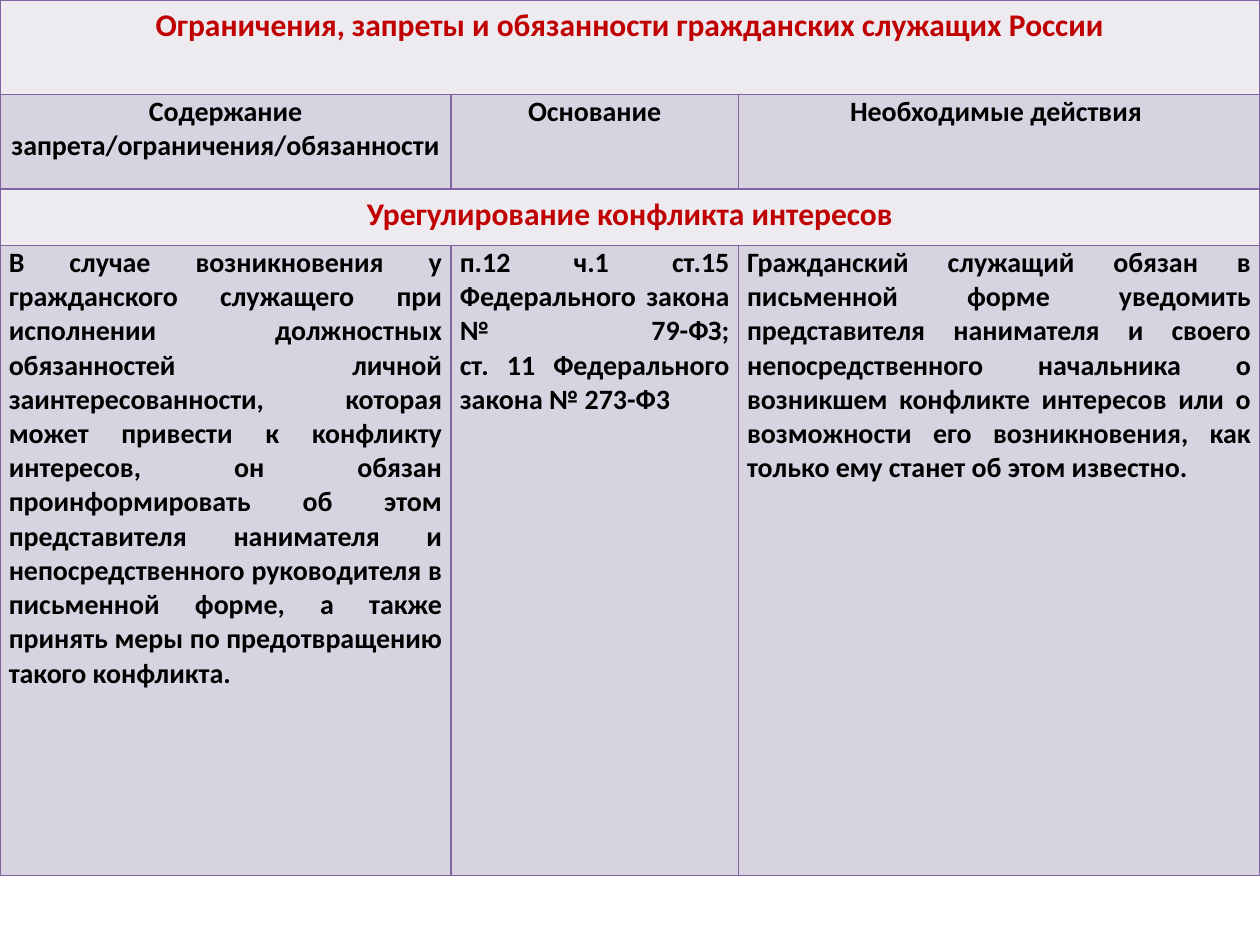
"""Build a slide with a table of civil servants' restrictions and duties."""
from lxml import etree
from pptx import Presentation
from pptx import util as u
from pptx.dml.color import RGBColor
from pptx.enum import text
from pptx.oxml import ns

COLORS = {"title": "C00000", "body": "000000", "band": "EDEAF0", "plain": "D8D3E0", "border": "8064A2"}
COLUMNS = [3.58, 2.28, 4.14]
HEIGHTS = [0.75, 0.75, 0.45, 5]
CENTER, JUSTIFY = text.PP_ALIGN.CENTER, text.PP_ALIGN.JUSTIFY
ROWS = [
    (CENTER, ["Ограничения, запреты и обязанности гражданских служащих России"]),
    (CENTER, ["Содержание запрета/ограничения/обязанности", "Основание", "Необходимые действия "]),
    (CENTER, ["Урегулирование конфликта интересов"]),
    (JUSTIFY, [
        "В случае возникновения у гражданского служащего при исполнении должностных обязанностей "
        "личной заинтересованности, которая может привести к конфликту интересов, он обязан "
        "проинформировать об этом представителя нанимателя и непосредственного руководителя "
        "в письменной форме, а также принять меры по предотвращению такого конфликта.",
        "п.12 ч.1 ст.15 Федерального закона № 79-ФЗ;\nст. 11 Федерального закона № 273-Ф3",
        "Гражданский служащий обязан в письменной форме уведомить представителя нанимателя "
        "и своего непосредственного начальника о возникшем конфликте интересов или "
        "о возможности его возникновения, как только ему станет об этом известно.",
    ]),
]


def add_borders(cell):
    properties = cell._tc.get_or_add_tcPr()
    for side in ("lnL", "lnR", "lnT", "lnB"):
        line = etree.SubElement(properties, ns.qn(f"a:{side}"), w=str(u.Pt(1)))
        fill = etree.SubElement(line, ns.qn("a:solidFill"))
        etree.SubElement(fill, ns.qn("a:srgbClr"), val=COLORS["border"])


def write_text(cell, content, align, size, color):
    para = cell.text_frame.paragraphs[0]
    para.alignment = align
    for index, line in enumerate(content.split("\n")):
        if index:
            para.add_line_break()
        span = para.add_run()
        span.text = line
        span.font.name = "Calibri"
        span.font.size = u.Pt(size)
        span.font.bold = True
        span.font.color.rgb = RGBColor.from_string(color)


deck = Presentation()
deck.slide_width, deck.slide_height = u.Inches(10), u.Inches(7.5)
page = deck.slides.add_slide(deck.slide_layouts[6])
table = page.shapes.add_table(
    len(HEIGHTS), len(COLUMNS), 0, 0, deck.slide_width, u.Inches(sum(HEIGHTS))
).table

for column, width in zip(table.columns, COLUMNS):
    column.width = u.Inches(width)

for row, height, (align, contents) in zip(table.rows, HEIGHTS, ROWS):
    row.height = u.Inches(height)
    cells = list(row.cells)
    is_band = len(contents) == 1
    for cell in cells:
        add_borders(cell)
        cell.fill.solid()
        cell.fill.fore_color.rgb = RGBColor.from_string(COLORS["band" if is_band else "plain"])
        if not is_band:
            cell.margin_left = cell.margin_right = u.Inches(0.07)
            cell.margin_top = cell.margin_bottom = 0
    if is_band:
        cells[0].merge(cells[-1])
    for cell, content in zip(cells, contents):
        write_text(cell, content, align, 18 if is_band else 16, COLORS["title" if is_band else "body"])

deck.save("out.pptx")
